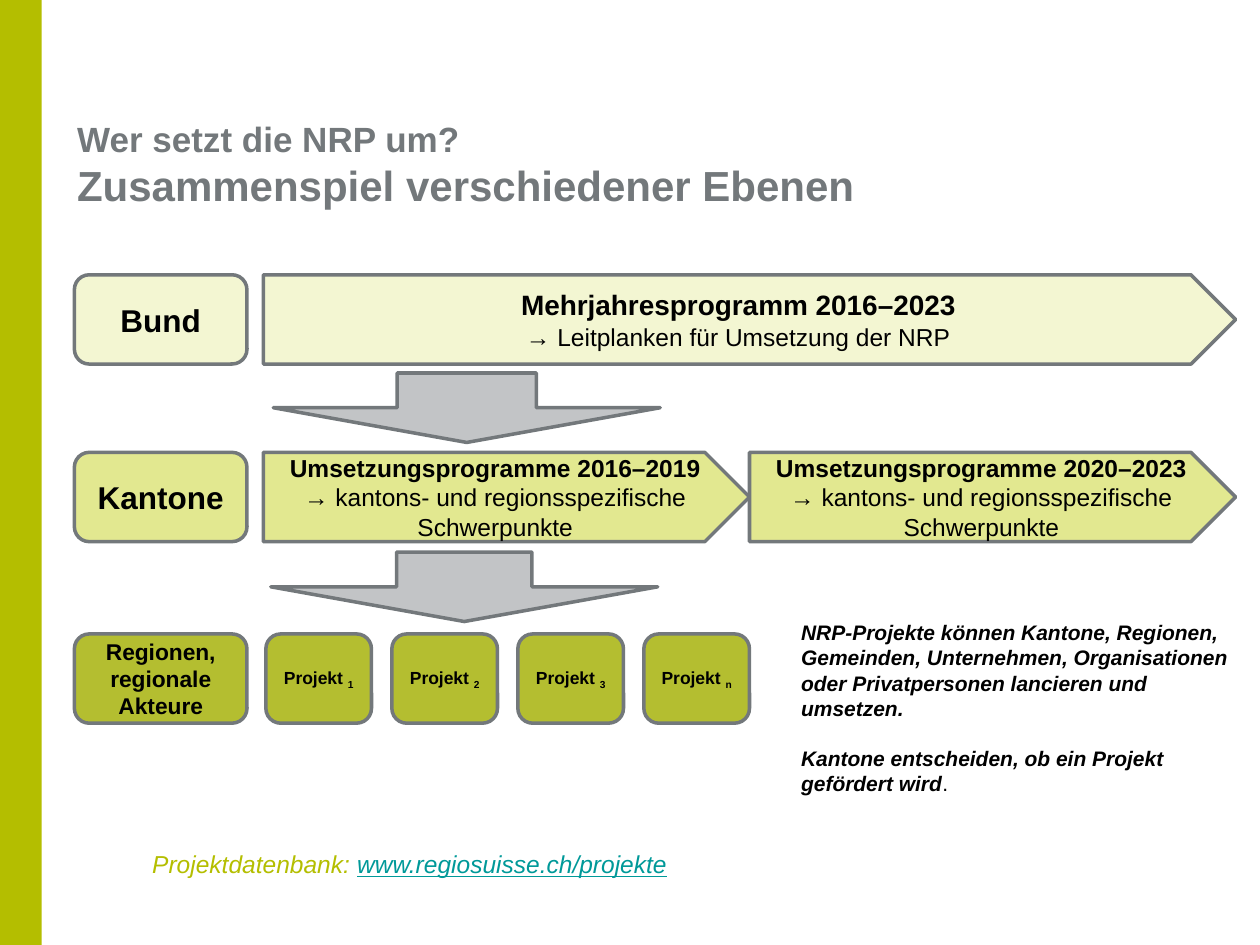
from dataclasses import dataclass

from pptx import Presentation
from pptx.dml.color import RGBColor
from pptx.enum.shapes import MSO_SHAPE as Preset
from pptx.enum.text import MSO_ANCHOR as Anchor, MSO_AUTO_SIZE as AutoSize, PP_ALIGN as Align
from pptx.util import Cm, Pt

GREY, BLACK, LIME, TEAL = "73787B", "000000", "B4BE00", "009999"
BUND, KANTONE, REGIONEN, ARROW = "F3F6D2", "E2E890", "B4BE30", "C2C4C6"
LEVEL_LEFT, LEVEL_WIDTH, ROW_HEIGHT = 1.5, 3.48, 1.8
PLAN_LEFT, PLAN_WIDTH = 5.31, 19.6
BUND_TOP, KANTONE_TOP, REGIONEN_TOP = 5.54, 9.12, 12.78
PROJECT_LEFT, PROJECT_STEP, PROJECT_WIDTH = 5.36, 2.54, 2.13


@dataclass
class Line:
    text: str
    size: float
    bold: bool = True
    subscript: str = ""


@dataclass
class Box:
    """A filled shape; lengths in centimetres."""
    preset: Preset
    left: float
    top: float
    width: float
    height: float
    fill: str
    lines: tuple[Line, ...] = ()
    inset: float = 0.25


def colour(hex_code: str) -> RGBColor:
    return RGBColor.from_string(hex_code)


def set_font(font, size: float, hex_code: str, bold: bool = False, italic: bool = False) -> None:
    font.name, font.size, font.bold, font.italic = "Arial", Pt(size), bold, italic
    font.color.rgb = colour(hex_code)


def add_box(slide, box: Box):
    shape = slide.shapes.add_shape(
        box.preset, Cm(box.left), Cm(box.top), Cm(box.width), Cm(box.height))
    shape.shadow.inherit = False
    shape.fill.solid()
    shape.fill.fore_color.rgb = colour(box.fill)
    shape.line.color.rgb = colour(GREY)
    shape.line.width = Pt(2)
    frame = shape.text_frame
    frame.vertical_anchor = Anchor.MIDDLE
    frame.margin_left = frame.margin_right = Cm(box.inset)
    for index, line in enumerate(box.lines):
        paragraph = frame.add_paragraph() if index else frame.paragraphs[0]
        paragraph.alignment = Align.CENTER
        set_font(paragraph.font, line.size, BLACK, line.bold)
        paragraph.add_run().text = line.text
        if line.subscript:
            run = paragraph.add_run()
            run.text = line.subscript
            run.font._element.set("baseline", "-25000")
    return shape


def level(top: float, fill: str, name: str, size: float) -> Box:
    return Box(Preset.ROUNDED_RECTANGLE, LEVEL_LEFT, top, LEVEL_WIDTH, ROW_HEIGHT, fill,
               (Line(name, size),))


def plan(left: float, top: float, width: float, fill: str, heading: Line, aim: str) -> Box:
    return Box(Preset.PENTAGON, left, top, width, ROW_HEIGHT, fill,
               (heading, Line(aim, 14, bold=False)))


def project(index: int, number: str) -> Box:
    return Box(Preset.ROUNDED_RECTANGLE, PROJECT_LEFT + index * PROJECT_STEP, REGIONEN_TOP,
               PROJECT_WIDTH, ROW_HEIGHT, REGIONEN, (Line("Projekt ", 10, subscript=number),), 0.1)


def add_title(slide) -> None:
    title = slide.shapes.title
    title.left, title.top, title.width, title.height = Cm(1.3), Cm(2.5), Cm(22.6), Cm(1.6)
    frame = title.text_frame
    frame.auto_size = AutoSize.NONE
    frame.vertical_anchor = Anchor.MIDDLE
    frame.text = "Wer setzt die NRP um?\nZusammenspiel verschiedener Ebenen"
    for paragraph, size in zip(frame.paragraphs, (20, 24)):
        paragraph.alignment = Align.LEFT
        paragraph.space_before = Pt(0)
        set_font(paragraph.font, size, GREY, bold=True)


def add_note(slide) -> None:
    frame = slide.shapes.add_textbox(Cm(15.9), Cm(12.37), Cm(9.4), Cm(4.45)).text_frame
    frame.word_wrap = True
    frame.text = ("NRP-Projekte können Kantone, Regionen, Gemeinden, Unternehmen, Organisationen "
                  "oder Privatpersonen lancieren und umsetzen.\n"
                  "Kantone entscheiden, ob ein Projekt gefördert wird")
    launch, decision = frame.paragraphs
    for paragraph in (launch, decision):
        set_font(paragraph.font, 12, BLACK, bold=True, italic=True)
    decision.space_before = Pt(14)
    full_stop = decision.add_run()
    full_stop.text = "."
    full_stop.font.bold = full_stop.font.italic = False


def add_database(slide) -> None:
    frame = slide.shapes.add_textbox(Cm(2.82), Cm(17), Cm(11.2), Cm(0.86)).text_frame
    frame.word_wrap = False
    paragraph = frame.paragraphs[0]
    set_font(paragraph.font, 14, LIME, italic=True)
    paragraph.add_run().text = "Projektdatenbank: "
    address = paragraph.add_run()
    address.text = "www.regiosuisse.ch/projekte"
    address.font.underline = True
    address.font.color.rgb = colour(TEAL)


def main() -> None:
    deck = Presentation()
    deck.slide_width, deck.slide_height = Cm(25.4), Cm(19.05)
    slide = deck.slides.add_slide(deck.slide_layouts[5])

    side_bar = add_box(slide, Box(Preset.RECTANGLE, 0, 0, 0.84, 19.05, LIME))
    side_bar.line.fill.background()
    add_title(slide)

    half = PLAN_WIDTH / 2
    boxes = [
        level(BUND_TOP, BUND, "Bund", 18),
        level(KANTONE_TOP, KANTONE, "Kantone", 18),
        level(REGIONEN_TOP, REGIONEN, "Regionen, regionale Akteure", 13),
        plan(PLAN_LEFT, BUND_TOP, PLAN_WIDTH, BUND, Line("Mehrjahresprogramm 2016–2023", 16),
             "→ Leitplanken für Umsetzung der NRP"),
    ]
    boxes += [plan(PLAN_LEFT + index * half, KANTONE_TOP, half, KANTONE,
                   Line(f"Umsetzungsprogramme {years}", 14),
                   "→ kantons- und regionsspezifische Schwerpunkte")
              for index, years in enumerate(("2016–2019", "2020–2023"))]
    boxes += [project(index, number) for index, number in enumerate("123n")]
    for box in boxes:
        add_box(slide, box)

    for left, top, stem in ((5.51, 7.52, 0.36), (5.46, 11.13, 0.35)):
        arrow = add_box(slide, Box(Preset.DOWN_ARROW, left, top, 7.8, 1.4, ARROW))
        arrow.adjustments[0] = stem

    add_note(slide)
    add_database(slide)
    deck.save("out.pptx")


if __name__ == "__main__":
    main()
